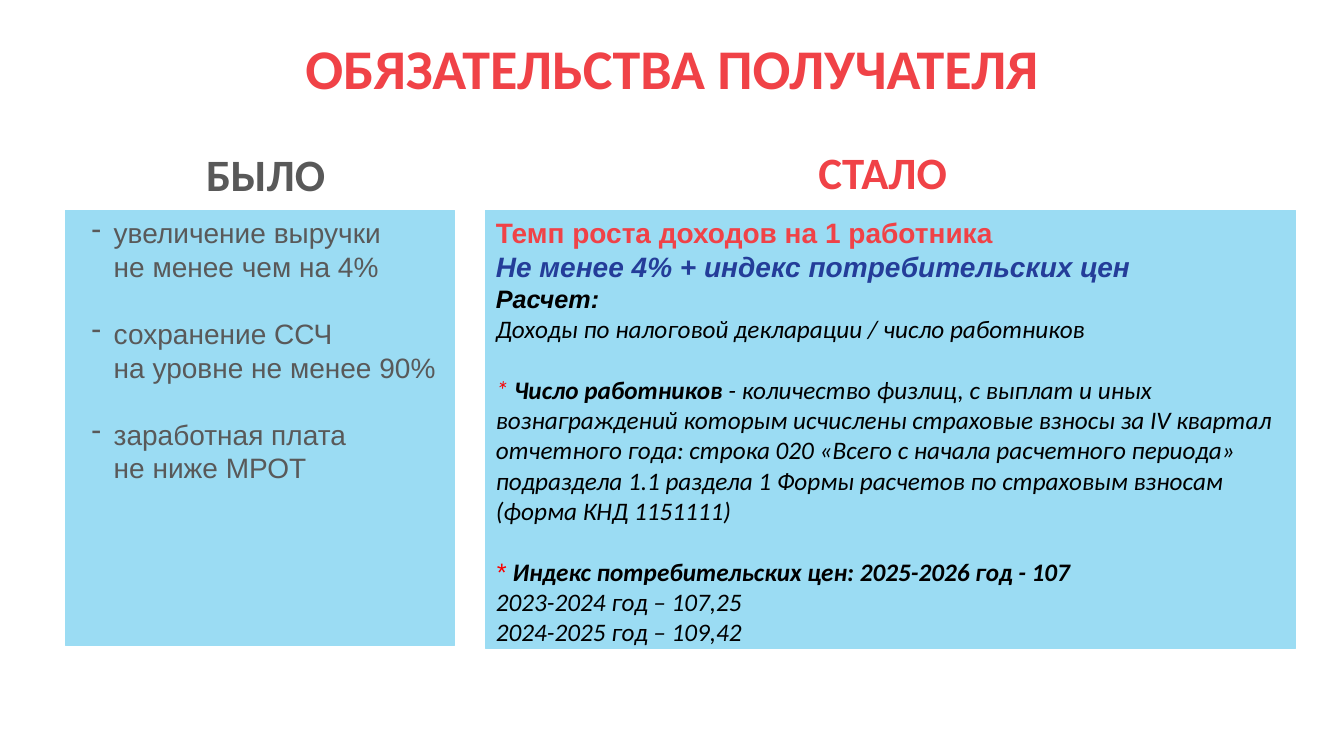
from dataclasses import dataclass

from lxml.etree import SubElement
from pptx import Presentation
from pptx.dml.color import RGBColor
from pptx.enum.shapes import MSO_SHAPE
from pptx.enum.text import MSO_ANCHOR, PP_ALIGN
from pptx.oxml.ns import qn
from pptx.util import Inches, Pt


@dataclass(frozen=True)
class Theme:
    """Colours, fonts and type sizes of the slide."""
    red: str = "F04247"
    star: str = "FA0000"
    blue: str = "243D99"
    grey: str = "595959"
    black: str = "000000"
    panel: str = "9BDCF3"
    sans: str = "Arial"
    main: str = "Calibri"
    title: int = 40
    head: int = 32
    lead: int = 20
    body: int = 18


T = Theme()
LEAD = (T.lead, T.sans, T.red, True, False)
GOAL = (T.lead, T.sans, T.blue, True, True)
CALC = (T.body, T.sans, T.black, True, True)
NOTE = (T.body, T.main, T.black, False, True)
TERM = (T.body, T.main, T.black, True, True)
STAR = (T.body, T.main, T.star, False, True)
MARK = (T.body, T.sans, T.star, False, True)
ITEM = (T.lead, T.sans, T.grey, False, False)

DUTIES = [
    ("увеличение выручки", "не менее чем на 4%"),
    ("сохранение ССЧ", "на уровне не менее 90%"),
    ("заработная плата", "не ниже МРОТ"),
]
RULES = [
    (0, [("Темп роста доходов на 1 работника", LEAD)]),
    (0, [("Не менее 4% + индекс потребительских цен", GOAL)]),
    (0, [("Расчет:", CALC)]),
    (0, [("Доходы по налоговой декларации / число работников", NOTE)]),
    (22, [("* ", STAR), ("Число работников ", TERM),
          ("- количество физлиц, с выплат и иных вознаграждений которым "
           "исчислены страховые взносы за IV квартал отчетного года: "
           "строка 020 «Всего с начала расчетного периода» подраздела 1.1 "
           "раздела 1 Формы расчетов по страховым взносам "
           "(форма КНД 1151111)", NOTE)]),
    (22, [("* ", MARK),
          ("Индекс потребительских цен: 2025-2026 год - 107", TERM)]),
    (0, [("2023-2024 год – 107,25", NOTE)]),
    (0, [("2024-2025 год – 109,42", NOTE)]),
]


def write(para, text, style):
    """Add one styled run to a paragraph."""
    size, face, color, bold, slant = style
    run = para.add_run()
    run.text = text
    font = run.font
    font.size, font.name = Pt(size), face
    font.bold, font.italic = bold, slant
    font.color.rgb = RGBColor.from_string(color)


def place(shape, box):
    """Move a shape to a box given in inches."""
    shape.left, shape.top, shape.width, shape.height = map(Inches, box)


def next_para(frame, index, gap):
    """Return the paragraph at an index, with a gap above all but the first."""
    para = frame.add_paragraph() if index else frame.paragraphs[0]
    para.alignment = PP_ALIGN.LEFT
    if index and gap:
        para.space_before = Pt(gap)
    return para


def add_title(slide, box):
    """Fill the title placeholder."""
    title = slide.shapes.title
    place(title, box)
    frame = title.text_frame
    frame.word_wrap = True
    frame.vertical_anchor = MSO_ANCHOR.MIDDLE
    para = frame.paragraphs[0]
    para.alignment = PP_ALIGN.CENTER
    para.line_spacing = 0.96
    write(para, "ОБЯЗАТЕЛЬСТВА ПОЛУЧАТЕЛЯ",
          (T.title, T.main, T.red, True, False))


def add_head(slide, box, text, color):
    """Add a column heading."""
    label = slide.shapes.add_textbox(*map(Inches, box))
    label.text_frame.word_wrap = False
    para = label.text_frame.paragraphs[0]
    para.alignment = PP_ALIGN.CENTER
    write(para, text, (T.head, T.main, color, True, False))


def add_panel(slide, box):
    """Add a filled panel and return its text frame."""
    panel = slide.shapes.add_shape(MSO_SHAPE.RECTANGLE, *map(Inches, box))
    panel.shadow.inherit = False
    panel.fill.solid()
    panel.fill.fore_color.rgb = RGBColor.from_string(T.panel)
    panel.line.color.rgb = RGBColor.from_string(T.panel)
    panel.line.width = Pt(0.75)
    frame = panel.text_frame
    frame.word_wrap = True
    frame.vertical_anchor = MSO_ANCHOR.TOP
    return frame


def add_before(slide, box):
    """Add the column of former duties."""
    left, top, width, _ = box
    frame = add_panel(slide, box)
    for index, lines in enumerate(DUTIES):
        para = next_para(frame, index, 24)
        props = para._p.get_or_add_pPr()
        props.set("marL", str(Inches(0.38)))
        props.set("indent", str(Inches(-0.22)))
        SubElement(props, qn("a:buChar")).set("char", "-")
        write(para, lines[0], ITEM)
        para.add_line_break()
        write(para, lines[1], ITEM)
    add_head(slide, (left + width / 2 - 0.64, top - 0.68, 1.39, 0.64),
             "БЫЛО", T.grey)


def add_after(slide, box):
    """Add the column of new rules."""
    left, top, width, _ = box
    frame = add_panel(slide, box)
    for index, (gap, runs) in enumerate(RULES):
        para = next_para(frame, index, gap)
        for text, style in runs:
            write(para, text, style)
    add_head(slide, (left + width / 2 - 0.84, top - 0.7, 1.52, 0.67),
             "СТАЛО", T.red)


def main():
    """Build the slide and save it."""
    deck = Presentation()
    deck.slide_width, deck.slide_height = Inches(13.33), Inches(7.5)
    slide = deck.slides.add_slide(deck.slide_layouts[5])
    add_title(slide, (0, 0.21, 13.33, 0.97))
    add_before(slide, (0.65, 2.09, 3.86, 4.31))
    add_after(slide, (4.82, 2.09, 8.03, 4.34))
    deck.save("out.pptx")


if __name__ == "__main__":
    main()
